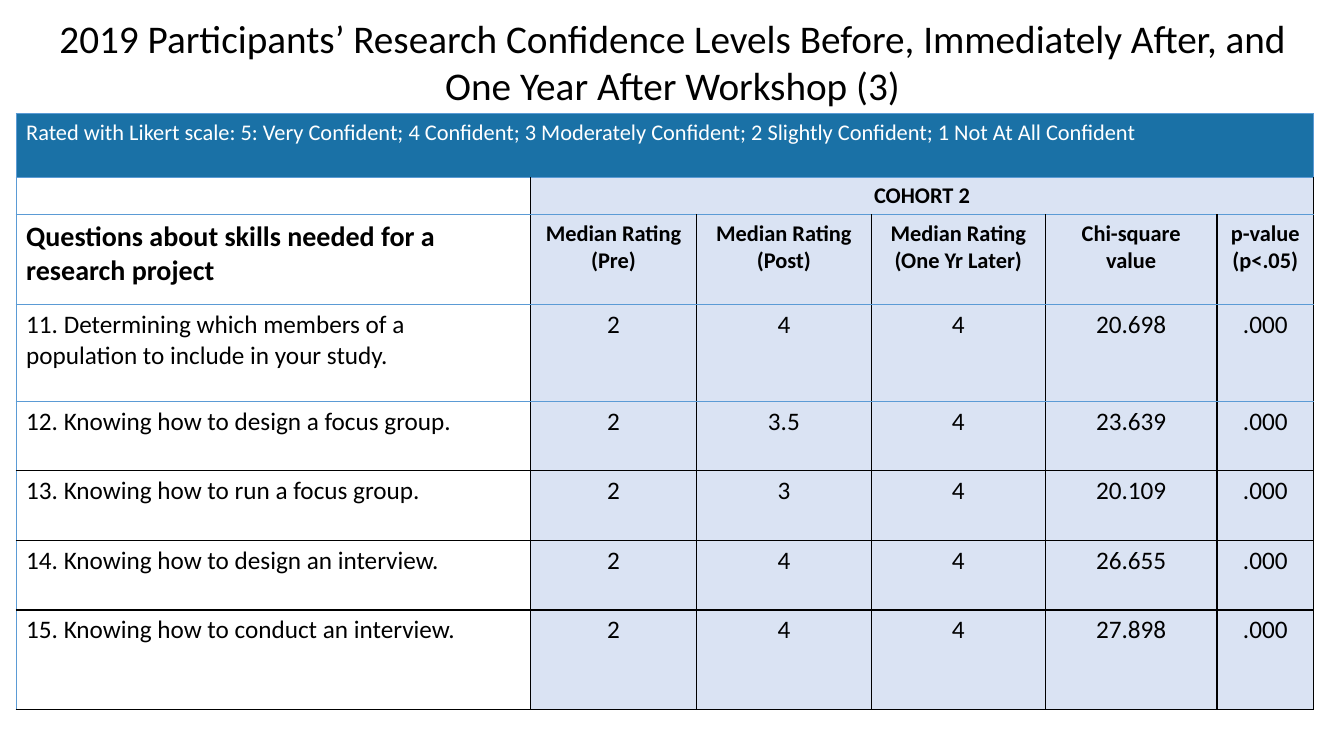
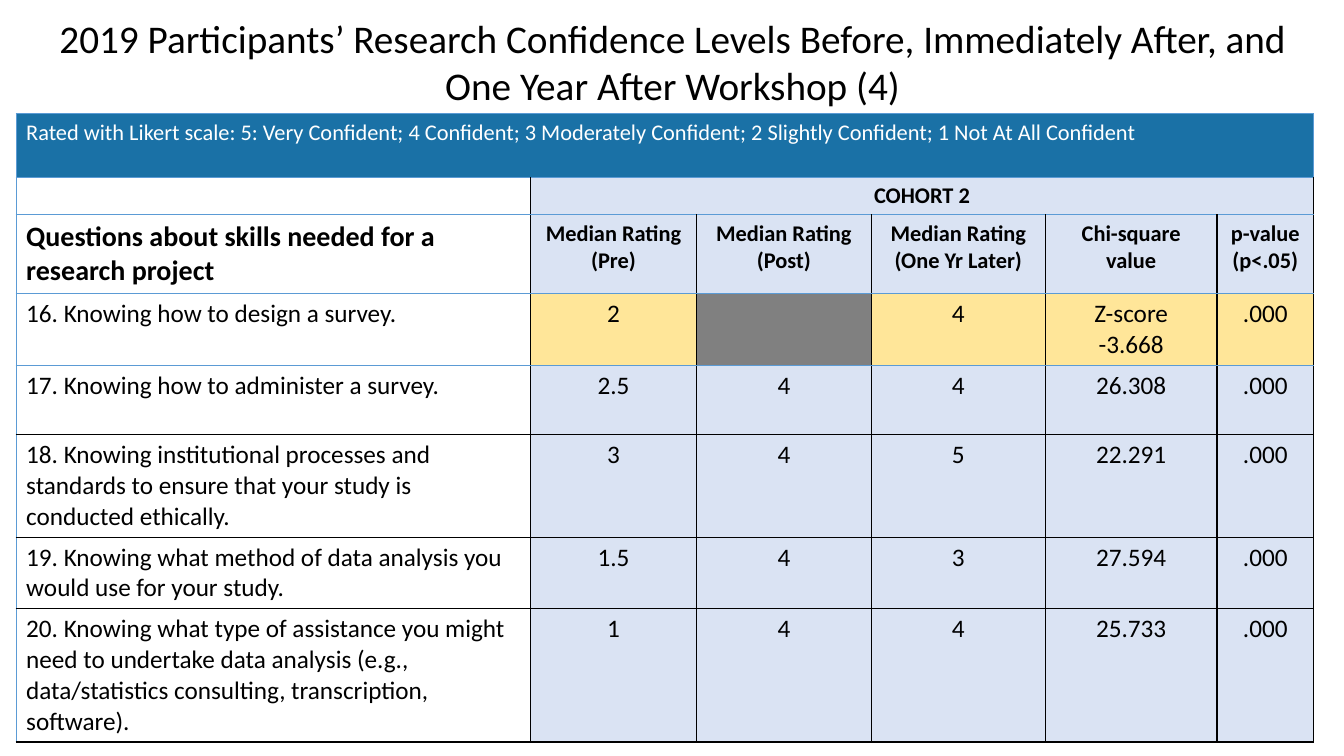
from lxml import etree
from pptx import Presentation
from pptx.dml.color import RGBColor
from pptx.enum import text
from pptx.oxml.ns import qn
from pptx.util import Inches, Pt

# Shared style
FONT = "Calibri"
BLACK, WHITE, GREY = "000000", "FFFFFF", "808080"
BAND, PALE, EDGE, YELLOW = "1A71A6", "DAE3F3", "5B9BD5", "FFE699"

# Shared content
TITLE = ("2019 Participants’ Research Confidence Levels Before, Immediately After, and",
         "One Year After Workshop ({})")
SCALE = ("Rated with Likert scale: 5: Very Confident; 4 Confident; "
         "3 Moderately Confident; 2 Slightly Confident; 1 Not At All Confident")
HEADINGS = ["Questions about skills needed for a research project",
            "Median Rating\n(Pre)", "Median Rating\n(Post)",
            "Median Rating\n(One Yr Later)", "Chi-square value", "p-value (p<.05)"]
COLUMNS = [5.1, 1.65, 1.73, 1.73, 1.7, 0.96]
FIRST_DATA_ROW = 3

# Each slide: number, row heights, data rows; the highlighted question has no post rating
SLIDES = [
    dict(number=3, heights=[0.63, 0.36, 0.89, 0.96, 0.69, 0.69, 0.69, 0.99],
         highlight=None, rows=[
        ["11. Determining which members of a population to include in your study.",
         "2", "4", "4", "20.698", ".000"],
        ["12. Knowing how to design a focus group.", "2", "3.5", "4", "23.639", ".000"],
        ["13. Knowing how to run a focus group.", "2", "3", "4", "20.109", ".000"],
        ["14. Knowing how to design an interview.", "2", "4", "4", "26.655", ".000"],
        ["15. Knowing how to conduct an interview.", "2", "4", "4", "27.898", ".000"]]),
    dict(number=4, heights=[0.63, 0.36, 0.77, 0.7, 0.69, 1, 0.69, 1.3],
         highlight=FIRST_DATA_ROW, rows=[
        ["16. Knowing how to design a survey.", "2", "", "4", "Z-score\n-3.668", ".000"],
        ["17. Knowing how to administer a survey.", "2.5", "4", "4", "26.308", ".000"],
        ["18. Knowing institutional processes and standards to ensure that your study "
         "is conducted ethically.", "3", "4", "5", "22.291", ".000"],
        ["19. Knowing what method of data analysis you would use for your study.",
         "1.5", "4", "3", "27.594", ".000"],
        ["20. Knowing what type of assistance you might need to undertake data analysis "
         "(e.g., data/statistics consulting, transcription, software).",
         "1", "4", "4", "25.733", ".000"]]),
]


def rgb(value):
    return RGBColor.from_string(value)


def add_span(para, words, size, color=BLACK, bold=False):
    span = para.add_run()
    span.text = words
    span.font.name, span.font.size, span.font.bold = FONT, Pt(size), bold
    span.font.color.rgb = rgb(color)


def add_title(page, number):
    box = page.shapes.title
    box.left, box.top = Inches(0.32), Inches(0.09)
    box.width, box.height = Inches(12.7), Inches(1.04)
    frame = box.text_frame
    frame.word_wrap = True
    frame.auto_size = text.MSO_AUTO_SIZE.NONE
    frame.vertical_anchor = text.MSO_ANCHOR.TOP
    para = frame.paragraphs[0]
    para.alignment = text.PP_ALIGN.CENTER
    add_span(para, TITLE[0], 28)
    para.add_line_break()
    add_span(para, TITLE[1].format(number), 28)


def set_borders(cell, row, col):
    """Blue around the band, on the outer left and above and below the heading rows."""
    is_blue = {"L": row == 0 or col == 0, "R": row == 0,
               "T": row <= FIRST_DATA_ROW + 1, "B": row <= FIRST_DATA_ROW}
    props = cell._tc.get_or_add_tcPr()
    for side, blue in is_blue.items():
        line = etree.SubElement(props, qn(f"a:ln{side}"), w=str(Pt(1)))
        fill = etree.SubElement(line, qn("a:solidFill"))
        etree.SubElement(fill, qn("a:srgbClr"), val=EDGE if blue else BLACK)


def cell_fill(row, col, words, highlight):
    if row == 0:
        return BAND
    if col == 0:
        return WHITE
    if row == highlight:
        return YELLOW if words else GREY
    return PALE


def fill_cell(cell, row, col, words, highlight):
    set_borders(cell, row, col)
    cell.fill.solid()
    cell.fill.fore_color.rgb = rgb(cell_fill(row, col, words, highlight))
    if not words:
        cell.margin_top = cell.margin_bottom = 0
        return
    heading = 0 < row < FIRST_DATA_ROW
    size = 18 if row >= FIRST_DATA_ROW else 20 if heading and col == 0 else 16
    frame = cell.text_frame
    for index, line in enumerate(words.split("\n")):
        para = frame.add_paragraph() if index else frame.paragraphs[0]
        para.alignment = text.PP_ALIGN.CENTER if col else text.PP_ALIGN.LEFT
        add_span(para, line, size, WHITE if row == 0 else BLACK, heading)


def add_ratings(page, heights, rows, highlight):
    blanks = [""] * 4
    grid = [[SCALE, ""] + blanks, ["", "COHORT 2"] + blanks, HEADINGS] + rows
    table = page.shapes.add_table(
        len(grid), len(COLUMNS), Inches(0.16), Inches(1.13),
        Inches(sum(COLUMNS)), Inches(sum(heights))).table
    table.first_row = table.horz_banding = False
    for column, width in zip(table.columns, COLUMNS):
        column.width = Inches(width)
    for table_row, height in zip(table.rows, heights):
        table_row.height = Inches(height)
    for row, line in enumerate(grid):
        for col, words in enumerate(line):
            fill_cell(table.cell(row, col), row, col, words, highlight)
    for row in (0, 1):
        table.cell(row, row).merge(table.cell(row, len(COLUMNS) - 1))


def main():
    deck = Presentation()
    deck.slide_width, deck.slide_height = Inches(13.33), Inches(7.5)
    title_only = deck.slide_layouts[5]
    for content in SLIDES:
        page = deck.slides.add_slide(title_only)
        add_title(page, content["number"])
        add_ratings(page, content["heights"], content["rows"], content["highlight"])
    deck.save("out.pptx")


if __name__ == "__main__":
    main()
